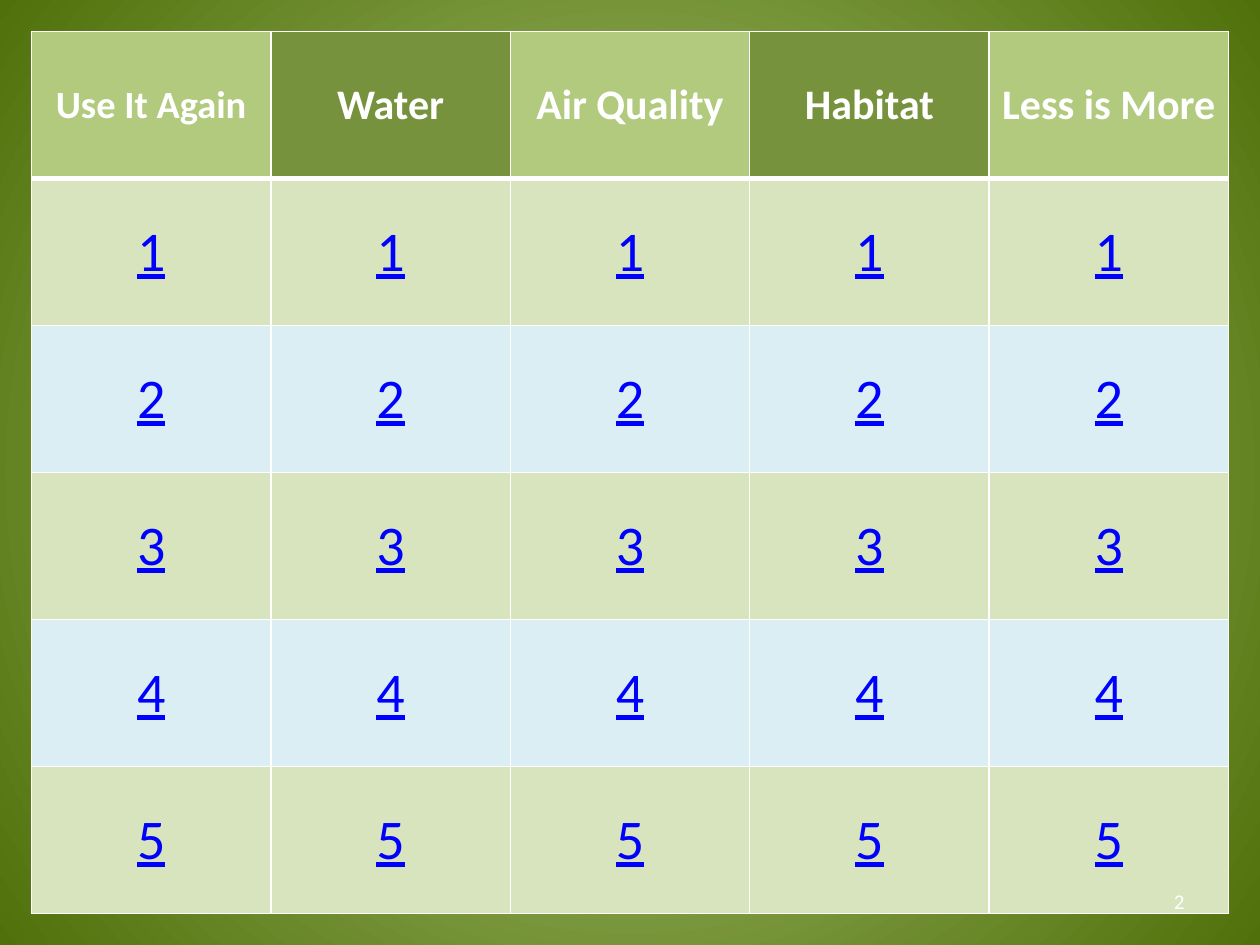
"""Build a quiz board slide with five categories and five numbered questions each."""
from lxml import etree
from pptx import Presentation
from pptx import util as u
from pptx.dml.color import RGBColor
from pptx.enum import text
from pptx.oxml import ns

CATEGORIES = [("Use It Again", 22), ("Water", 24), ("Air Quality", 24),
              ("Habitat", 24), ("Less is More", 24)]
QUESTIONS = ["1", "2", "3", "4", "5"]
PAGE_NUMBER = "2"

WHITE = RGBColor(0xFF, 0xFF, 0xFF)
LINK_BLUE = RGBColor(0x00, 0x00, 0xFF)
LIGHT_GREEN = RGBColor(0xB1, 0xCA, 0x7E)
MID_GREEN = RGBColor(0x76, 0x92, 0x3C)
DARK_GREEN = RGBColor(0x4F, 0x70, 0x0A)
PALE_GREEN = RGBColor(0xD7, 0xE4, 0xBD)
PALE_BLUE = RGBColor(0xDB, 0xEE, 0xF4)
HEADER_FILLS = [LIGHT_GREEN, MID_GREEN]
ROW_FILLS = [PALE_GREEN, PALE_BLUE]

SLIDE_WIDTH, SLIDE_HEIGHT, MARGIN = 720, 540, 18
COLUMN_WIDTH = (SLIDE_WIDTH - 2 * MARGIN) / len(CATEGORIES)
ROW_HEIGHT = (SLIDE_HEIGHT - 2 * MARGIN) / (len(QUESTIONS) + 1)


def write_text(frame, content, size, color=WHITE, bold=False, underline=False,
               align=text.PP_ALIGN.CENTER):
    paragraph = frame.paragraphs[0]
    paragraph.alignment = align
    run = paragraph.add_run()
    run.text = content
    font = run.font
    font.name, font.size = "Calibri", u.Pt(size)
    font.bold, font.underline = bold, underline
    font.color.rgb = color


def set_borders(cell, **widths):
    properties = cell._tc.get_or_add_tcPr()
    for index, side in enumerate("LRTB"):
        line = etree.Element(ns.qn(f"a:ln{side}"), w=str(u.Pt(widths.get(side, 1))))
        fill = etree.SubElement(line, ns.qn("a:solidFill"))
        etree.SubElement(fill, ns.qn("a:srgbClr"), val=str(WHITE))
        properties.insert(index, line)


def fill_cell(cell, content, size, fill, borders, **font_format):
    cell.fill.solid()
    cell.fill.fore_color.rgb = fill
    cell.vertical_anchor = text.MSO_ANCHOR.MIDDLE
    write_text(cell.text_frame, content, size, **font_format)
    set_borders(cell, **borders)


def paint_background(slide):
    fill = slide.background.fill
    fill.gradient()
    for stop, color in zip(fill.gradient_stops, [LIGHT_GREEN, DARK_GREEN]):
        stop.color.rgb = color
    gradient = slide._element.find(".//" + ns.qn("a:gradFill"))
    gradient.remove(gradient.find(ns.qn("a:lin")))
    circle = etree.SubElement(gradient, ns.qn("a:path"), {"path": "circle"})
    etree.SubElement(circle, ns.qn("a:fillToRect"), dict.fromkeys("ltrb", "50000"))


def add_board(slide):
    shape = slide.shapes.add_table(
        len(QUESTIONS) + 1, len(CATEGORIES), u.Pt(MARGIN), u.Pt(MARGIN),
        u.Pt(SLIDE_WIDTH - 2 * MARGIN), u.Pt(SLIDE_HEIGHT - 2 * MARGIN))
    table = shape.table
    table.horz_banding = False
    for column in table.columns:
        column.width = u.Pt(COLUMN_WIDTH)
    for row in table.rows:
        row.height = u.Pt(ROW_HEIGHT)
    for column, (category, size) in enumerate(CATEGORIES):
        fill_cell(table.cell(0, column), category, size, HEADER_FILLS[column % 2],
                  {"B": 3}, bold=True)
        for row, question in enumerate(QUESTIONS):
            fill_cell(table.cell(row + 1, column), question, 32, ROW_FILLS[row % 2],
                      {"T": 3} if row == 0 else {}, color=LINK_BLUE, underline=True)


def add_page_number(slide):
    box = slide.shapes.add_textbox(u.Pt(516), u.Pt(500.5), u.Pt(168), u.Pt(28.75))
    box.text_frame.word_wrap = True
    box.text_frame.vertical_anchor = text.MSO_ANCHOR.MIDDLE
    write_text(box.text_frame, PAGE_NUMBER, 12, align=text.PP_ALIGN.RIGHT)


def main():
    presentation = Presentation()
    presentation.slide_width = u.Pt(SLIDE_WIDTH)
    presentation.slide_height = u.Pt(SLIDE_HEIGHT)
    slide = presentation.slides.add_slide(presentation.slide_layouts[6])
    paint_background(slide)
    add_board(slide)
    add_page_number(slide)
    presentation.save("out.pptx")


if __name__ == "__main__":
    main()
